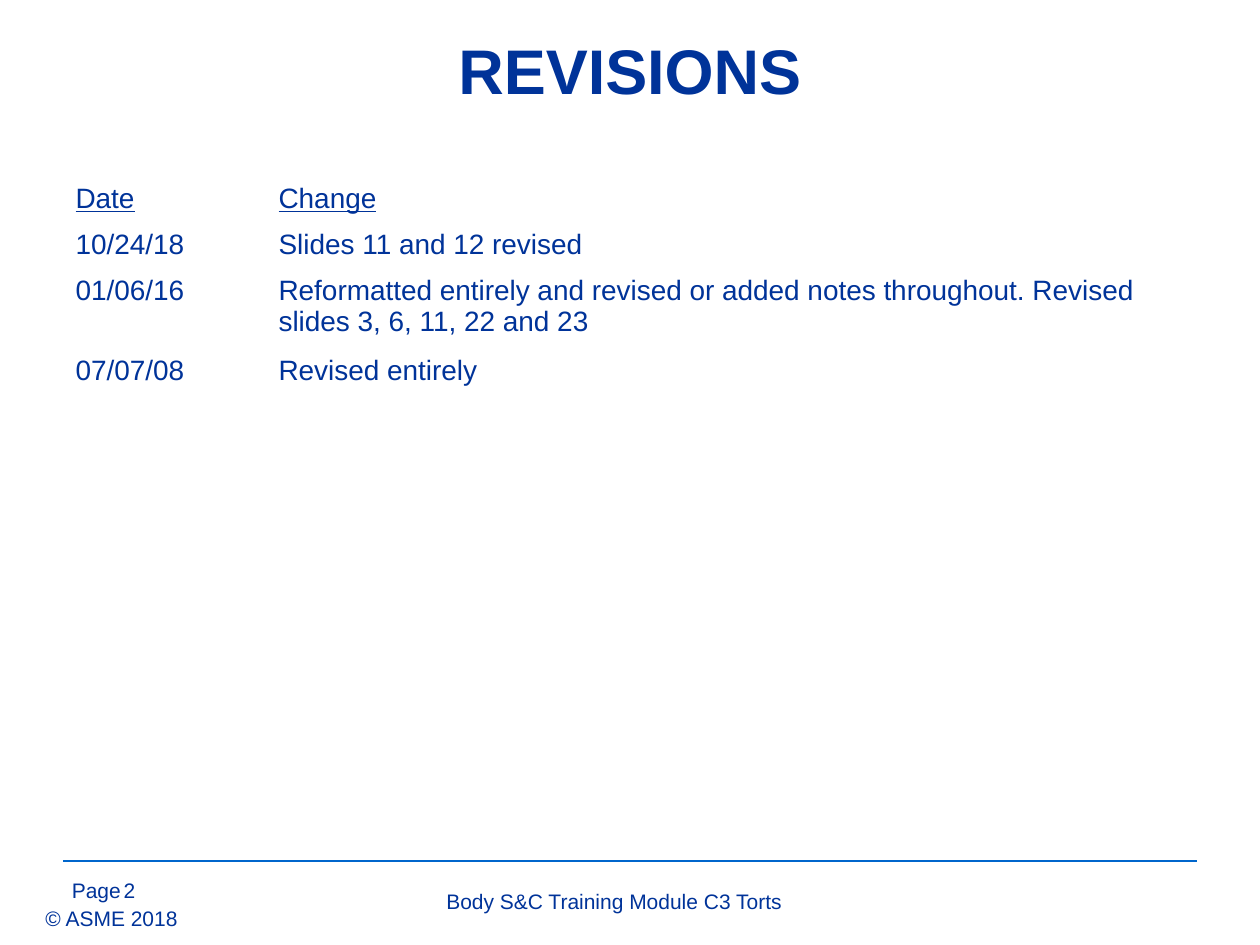
from dataclasses import dataclass

import pptx
import pptx.dml.color
import pptx.enum.shapes
import pptx.enum.text
import pptx.oxml.ns
import pptx.util
from lxml import etree

Pt = pptx.util.Pt
Align = pptx.enum.text.PP_ALIGN
Anchor = pptx.enum.text.MSO_ANCHOR

NAVY, BLUE, WHITE = "003399", "0066CC", "FFFFFF"


@dataclass
class Label:
    text: str
    left: float
    top: float
    width: float
    height: float
    size: float = 12
    bold: bool = False
    align: Align = Align.LEFT
    anchor: Anchor = Anchor.TOP
    inset: bool = True
    wrap: bool = True


@dataclass
class Change:
    date: str
    note: str
    height: float = 25
    under: bool = False


LABELS = [
    Label("Page", 34, 498, 55, 19),
    Label("© ASME 2018", 26, 517.5, 76, 14.5, inset=False, wrap=False),
    Label("Body S&C Training Module C3 Torts", 111, 504, 480, 19,
          align=Align.CENTER),
    Label("2", 63.5, 498, 34, 17),
    Label("REVISIONS", 72, 21.5, 576, 36, size=36, bold=True,
          align=Align.CENTER, anchor=Anchor.MIDDLE),
]

CHANGES = [
    Change("Date", "Change", under=True),
    Change("10/24/18", "Slides 11 and 12 revised"),
    Change("01/06/16", "Reformatted entirely and revised or added notes "
           "throughout. Revised slides 3, 6, 11, 22 and 23", height=43),
    Change("07/07/08", "Revised entirely"),
]


def color(code: str) -> pptx.dml.color.RGBColor:
    return pptx.dml.color.RGBColor.from_string(code)


def write(frame, text: str, *, size: float = 12, bold: bool = False,
          under: bool = False, align: Align = Align.LEFT) -> None:
    para = frame.paragraphs[0]
    para.alignment = align
    run = para.add_run()
    run.text = text
    font = run.font
    font.name, font.size = "Arial", Pt(size)
    font.bold, font.underline = bold, under
    font.color.rgb = color(NAVY)


def add_label(slide, label: Label) -> None:
    box = slide.shapes.add_textbox(Pt(label.left), Pt(label.top),
                                   Pt(label.width), Pt(label.height))
    frame = box.text_frame
    frame.word_wrap = label.wrap
    frame.vertical_anchor = label.anchor
    if not label.inset:
        frame.margin_left = frame.margin_right = 0
        frame.margin_top = frame.margin_bottom = 0
    write(frame, label.text, size=label.size, bold=label.bold,
          align=label.align)


def add_rule(slide, left: float, right: float, top: float) -> None:
    rule = slide.shapes.add_connector(
        pptx.enum.shapes.MSO_CONNECTOR.STRAIGHT,
        Pt(left), Pt(top), Pt(right), Pt(top))
    rule.line.color.rgb = color(BLUE)
    rule.line.width = Pt(0.75)
    etree.SubElement(rule._element.spPr, pptx.oxml.ns.qn("a:effectLst"))


def add_log(slide, left: float, top: float, widths: list[float],
            changes: list[Change]) -> None:
    """Draw the table of dated changes."""
    height = sum(change.height for change in changes)
    table = slide.shapes.add_table(
        len(changes), len(widths), Pt(left), Pt(top),
        Pt(sum(widths)), Pt(height)).table
    table.first_row = table.horz_banding = False
    for column, width in zip(table.columns, widths):
        column.width = Pt(width)
    for row, change in zip(table.rows, changes):
        row.height = Pt(change.height)
        for cell, text in zip(row.cells, (change.date, change.note)):
            cell.fill.solid()
            cell.fill.fore_color.rgb = color(WHITE)
            write(cell.text_frame, text, size=16, under=change.under)


def main() -> None:
    deck = pptx.Presentation()
    deck.slide_width, deck.slide_height = Pt(720), Pt(540)
    slide = deck.slides.add_slide(deck.slide_layouts[6])
    add_rule(slide, 36, 684, 492)
    for label in LABELS:
        add_label(slide, label)
    add_log(slide, 36, 101, [116, 532], CHANGES)
    deck.save("out.pptx")


if __name__ == "__main__":
    main()
